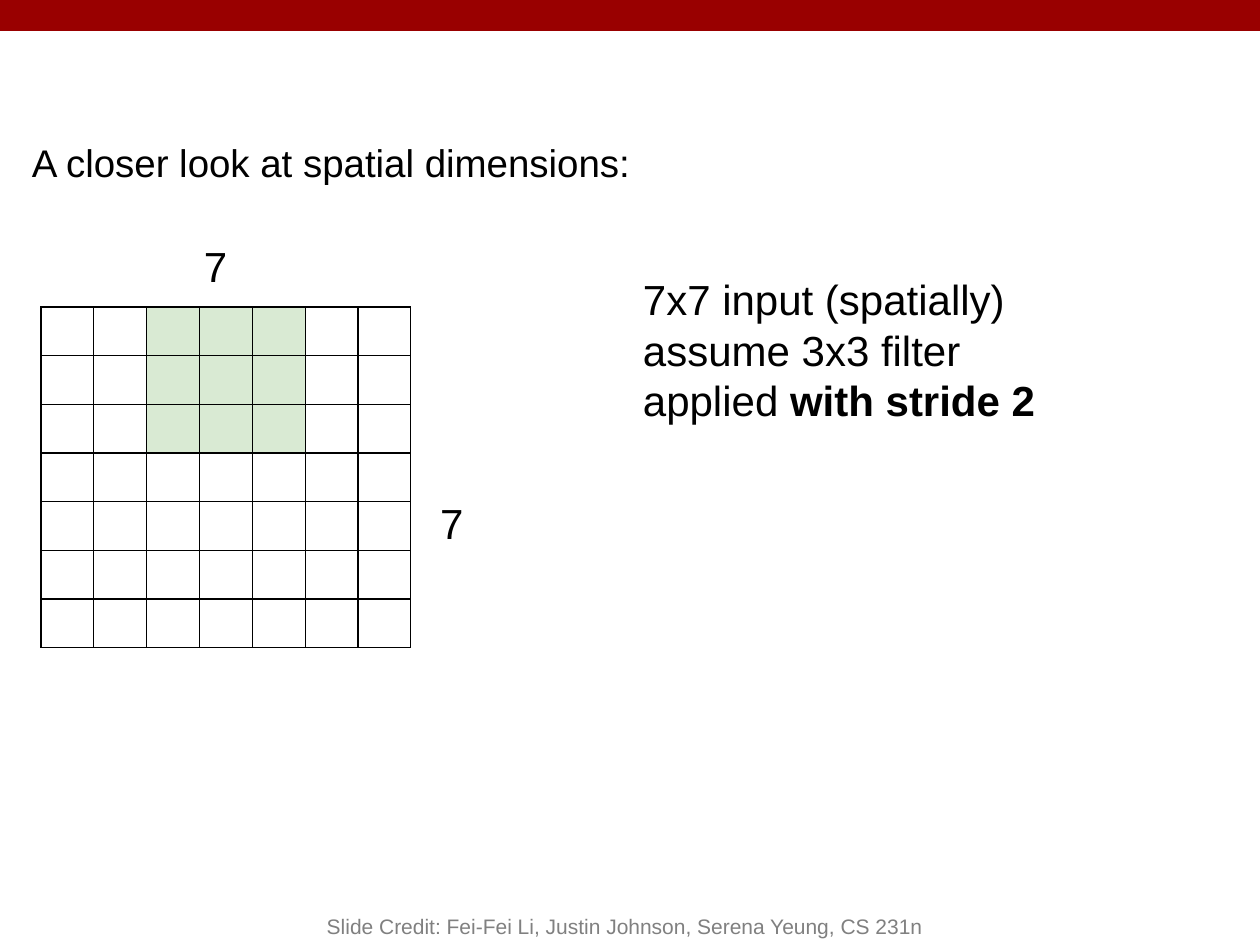
from lxml import etree
from pptx import Presentation
from pptx.dml.color import RGBColor
from pptx.enum.shapes import MSO_SHAPE
from pptx.enum.text import MSO_ANCHOR, MSO_AUTO_SIZE, PP_ALIGN
from pptx.oxml.ns import qn
from pptx.util import Pt

PX = 914400 // 126


def paint(fill, hex_colour):
    fill.solid()
    fill.fore_color.rgb = RGBColor.from_string(hex_colour)


def write(box, lines, size, hex_colour="000000", align=PP_ALIGN.LEFT,
          anchor=MSO_ANCHOR.TOP, inset=13):
    """Fill a box with lines, each a list of (text, bold) runs."""
    frame = box.text_frame
    frame.word_wrap = True
    frame.auto_size = MSO_AUTO_SIZE.NONE
    frame.vertical_anchor = anchor
    frame.margin_left = frame.margin_right = 13 * PX
    frame.margin_top = frame.margin_bottom = inset * PX
    for index, line in enumerate(lines):
        para = frame.add_paragraph() if index else frame.paragraphs[0]
        para.alignment = align
        for text, bold in line:
            span = para.add_run()
            span.text = text
            span.font.name = "Arial"
            span.font.size = Pt(size)
            span.font.bold = bold
            paint(span.font.fill, hex_colour)


deck = Presentation()
deck.slide_width, deck.slide_height = 1260 * PX, 945 * PX
page = deck.slides.add_slide(deck.slide_layouts[5])

# Top band
band = page.shapes.add_shape(MSO_SHAPE.RECTANGLE, 0, 0, 1260 * PX, 31 * PX)
band.shadow.inherit = False
paint(band.fill, "990000")
band.line.fill.background()

# Title
title = page.shapes.title
title.left, title.top, title.width, title.height = 19 * PX, 126 * PX, 1154 * PX, 83 * PX
write(title, [[("A closer look at spatial dimensions:", False)]], 22)

# Description and the two size labels
description = [
    [("7x7 input (spatially)", False)],
    [("assume 3x3 filter", False)],
    [("applied ", False), ("with stride 2", True)],
]
size_label = [[("7", False)]]
for left, top, width, height, lines in [
    (630, 261, 706, 253, description),
    (191, 228, 76, 63, size_label),
    (427, 485, 81, 39, size_label),
]:
    box = page.shapes.add_textbox(left * PX, top * PX, width * PX, height * PX)
    write(box, lines, 24)

# Input grid with the filter position shaded
COUNT = 7
FILTER_ROWS, FILTER_COLUMNS = range(0, 3), range(2, 5)
GRID_WIDTH, GRID_HEIGHT = 370 * PX, 341 * PX
grid = page.shapes.add_table(COUNT, COUNT, 41 * PX, 307 * PX, GRID_WIDTH, GRID_HEIGHT).table
grid.first_row = grid.horz_banding = False
for column in grid.columns:
    column.width = GRID_WIDTH // COUNT
for row_number, row in enumerate(grid.rows):
    row.height = GRID_HEIGHT // COUNT
    for column_number, cell in enumerate(row.cells):
        cell.margin_left = cell.margin_right = cell.margin_top = cell.margin_bottom = 0
        covered = row_number in FILTER_ROWS and column_number in FILTER_COLUMNS
        paint(cell.fill, "D9EAD3" if covered else "FFFFFF")
        properties = cell._tc.get_or_add_tcPr()
        for position, side in enumerate(("lnL", "lnR", "lnT", "lnB")):
            border = etree.Element(qn(f"a:{side}"), w=str(Pt(0.75)))
            solid = etree.SubElement(border, qn("a:solidFill"))
            etree.SubElement(solid, qn("a:srgbClr"), val="000000")
            properties.insert(position, border)

# Credit line
credit = page.shapes.add_textbox(252 * PX, 882 * PX, 746 * PX, 63 * PX)
write(credit, [[("Slide Credit: Fei-Fei Li, Justin Johnson, Serena Yeung, CS 231n", False)]],
      12, "808080", PP_ALIGN.CENTER, MSO_ANCHOR.BOTTOM, inset=6)

deck.save("out.pptx")
